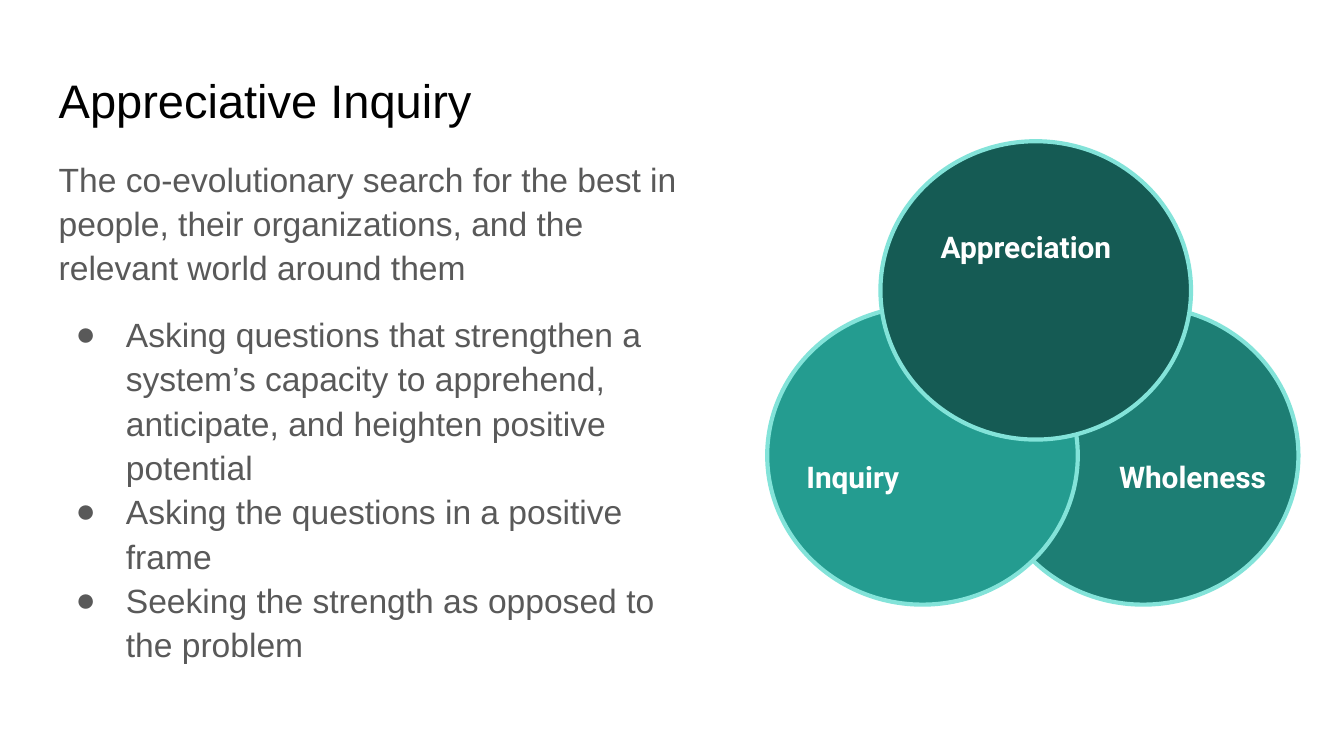
from pptx import Presentation
from pptx.dml.color import RGBColor
from pptx.enum.shapes import MSO_SHAPE
from pptx.enum.text import MSO_ANCHOR
from pptx.oxml.ns import qn
from pptx.util import Cm, Pt
from lxml import etree

ELLIPSE = MSO_SHAPE.OVAL
TOP, MIDDLE, BOTTOM = MSO_ANCHOR.TOP, MSO_ANCHOR.MIDDLE, MSO_ANCHOR.BOTTOM
BLACK = RGBColor(0x00, 0x00, 0x00)
WHITE = RGBColor(0xFF, 0xFF, 0xFF)
GREY = RGBColor(0x59, 0x59, 0x59)
MINT = RGBColor(0x83, 0xE3, 0xD9)
TEAL = RGBColor(0x24, 0x9C, 0x90)
DEEP_TEAL = RGBColor(0x1D, 0x7E, 0x74)
DARK_TEAL = RGBColor(0x15, 0x5B, 0x54)

LEFT = 0.86
BODY_TOP = 2.67
LOWER_TOP, LOWER_LABEL_TOP = 5.79, 8.15
LABEL_HEIGHT = 1.6
DEFINITION = (
    "The co-evolutionary search for the best in people, "
    "their organizations, and the relevant world around them"
)
PRACTICES = [
    "Asking questions that strengthen a system’s capacity to apprehend, "
    "anticipate, and heighten positive potential",
    "Asking the questions in a positive frame",
    "Seeking the strength as opposed to the problem",
]
CIRCLES = [
    ("Wholeness", DEEP_TEAL, (18.67, LOWER_TOP), (20.9, LOWER_LABEL_TOP, 3.4)),
    ("Inquiry", TEAL, (14.5, LOWER_TOP), (14.99, LOWER_LABEL_TOP, 3.4)),
    ("Appreciation", DARK_TEAL, (16.64, BODY_TOP), (17.53, 3.81, 4.09)),
]


class SlideBuilder:
    """Hold the text and circle style together with the current slide."""

    inset = Cm(0.25)
    circle_size = Cm(5.87), Cm(5.64)
    outline = Pt(2.25)

    def __init__(self, deck):
        self.slide = deck.slides.add_slide(deck.slide_layouts[6])

    def text(self, shapes, area, lines, size, color, font="Arial",
             bold=False, anchor=TOP, spacing=1.0):
        box = shapes.add_textbox(*(Cm(length) for length in area))
        frame = box.text_frame
        frame.word_wrap = True
        frame.vertical_anchor = anchor
        frame.margin_left = frame.margin_right = self.inset
        frame.margin_top = frame.margin_bottom = self.inset
        frame.text = "\n".join(lines)
        for para in frame.paragraphs:
            para.line_spacing = spacing
            for span in para.runs:
                span.font.name = font
                span.font.size = Pt(size)
                span.font.bold = bold
                span.font.color.rgb = color
        return frame

    def bullet(self, para, color):
        properties = para._p.get_or_add_pPr()
        properties.set("marL", str(Cm(1.27)))
        properties.set("indent", str(-Cm(0.95)))
        tint = etree.SubElement(properties, qn("a:buClr"))
        etree.SubElement(tint, qn("a:srgbClr"), val=str(color))
        etree.SubElement(properties, qn("a:buFont"), typeface="Arial")
        etree.SubElement(properties, qn("a:buChar"), char="●")

    def circle(self, shapes, left, top, fill):
        circle = shapes.add_shape(ELLIPSE, Cm(left), Cm(top), *self.circle_size)
        circle.shadow.inherit = False
        circle.fill.solid()
        circle.fill.fore_color.rgb = fill
        circle.line.color.rgb = MINT
        circle.line.width = self.outline

    def venn(self, circles):
        group = self.slide.shapes.add_group_shape()
        for label, fill, corner, (left, top, width) in circles:
            self.circle(group.shapes, *corner, fill)
            self.text(group.shapes, (left, top, width, LABEL_HEIGHT), [label],
                      16, WHITE, "Roboto", True, MIDDLE, 1.15)


def main():
    deck = Presentation()
    deck.slide_width, deck.slide_height = Cm(25.4), Cm(14.29)
    builder = SlideBuilder(deck)
    shapes = builder.slide.shapes
    builder.text(shapes, (LEFT, 1.07, 23.67, 1.6), ["Appreciative Inquiry"],
                 25.2, BLACK, anchor=BOTTOM)
    body = builder.text(shapes, (LEFT, BODY_TOP, 12.7, 10.44),
                        [DEFINITION, *PRACTICES], 18, GREY, spacing=1.1)
    practices = body.paragraphs[1:]
    practices[0].space_before = Pt(12)
    for para in practices:
        builder.bullet(para, GREY)
    builder.venn(CIRCLES)
    deck.save("out.pptx")


if __name__ == "__main__":
    main()
